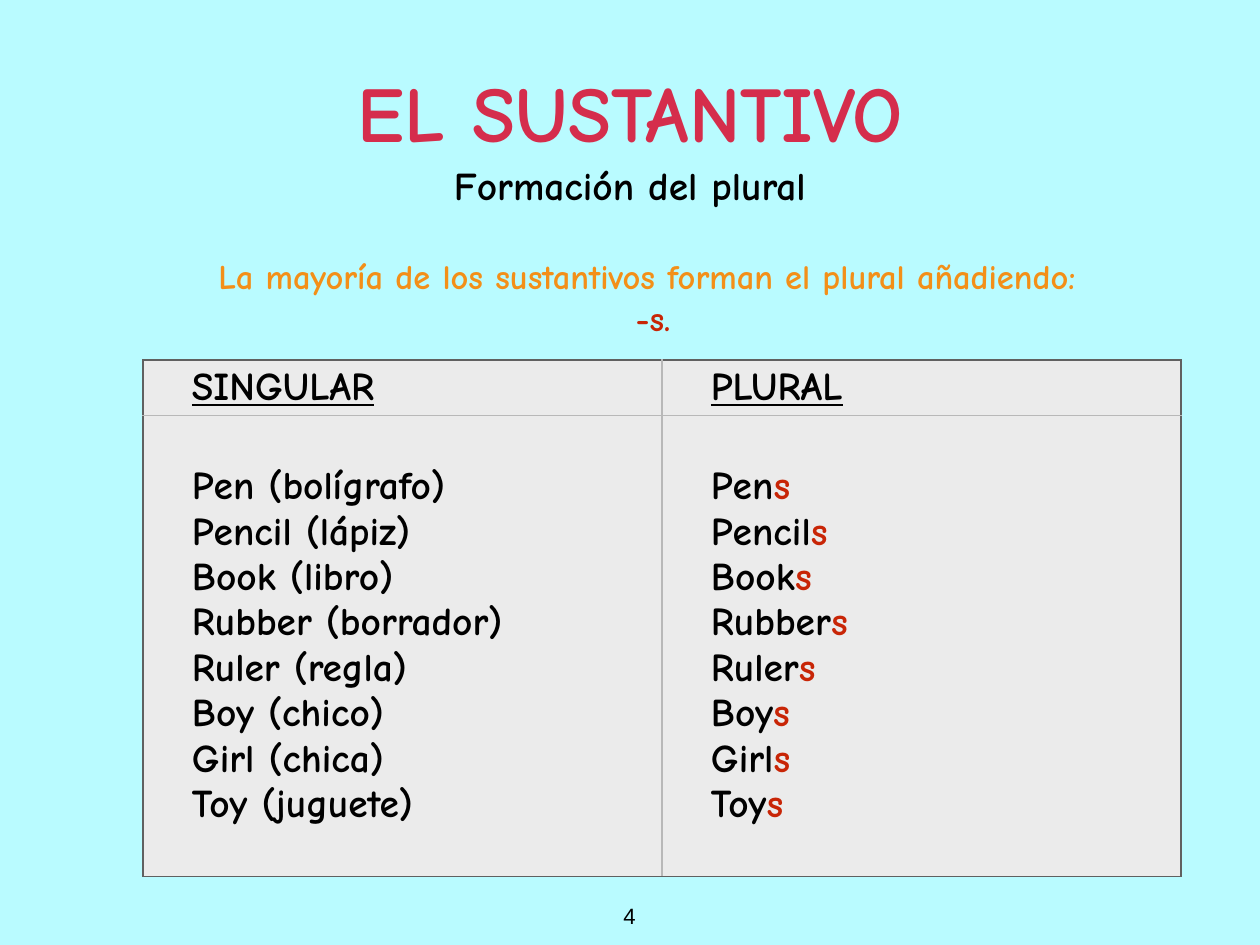
from lxml.etree import SubElement
from pptx import Presentation
from pptx.dml.color import RGBColor
from pptx.enum.text import MSO_ANCHOR, MSO_AUTO_SIZE, PP_ALIGN
from pptx.oxml.ns import qn
from pptx.util import Pt

PX = 10320
INSET = 5 * PX
INDENT = 44 * PX
BLACK, RED, ORANGE, PINK = "000000", "C82506", "F38F18", "D52D4C"
OUTER, INNER = "606060", "B8B8B8"
COMIC = {"name": "Comic Neue", "bold": True}


def paint(fill, color):
    fill.solid()
    fill.fore_color.rgb = RGBColor.from_string(color)


def write(text_frame, lines, font_format, alignment):
    """Fill a frame with lines, each a list of (text, color) runs."""
    for index, line in enumerate(lines):
        paragraph = text_frame.paragraphs[0] if index == 0 else text_frame.add_paragraph()
        paragraph.alignment = alignment
        paragraph.space_before = Pt(0)
        for text, color in line:
            run = paragraph.add_run()
            run.text = text
            for name, value in font_format.items():
                setattr(run.font, name, value)
            paint(run.font.fill, color)


presentation = Presentation()
presentation.slide_width = 1260 * PX
presentation.slide_height = 945 * PX
slide = presentation.slides.add_slide(presentation.slide_layouts[0])
paint(slide.background.fill, "B9FBFF")

# Headings and page number
rule = slide.shapes.title
subtitle = slide.placeholders[1]
heading = slide.shapes.add_textbox(0, 0, 0, 0)
page_number = slide.shapes.add_textbox(0, 0, 0, 0)
rule_lines = [
    [("La mayoría de los sustantivos forman el plural añadiendo: ", ORANGE)],
    [("-s.", RED)],
]
text_blocks = [
    (rule, (134, 222, 1038, 121), MSO_ANCHOR.BOTTOM, True,
     rule_lines, {**COMIC, "size": Pt(28)}),
    (heading, (123, 43, 1014, 120), MSO_ANCHOR.BOTTOM, True,
     [[("EL SUSTANTIVO", PINK)]], {**COMIC, "size": Pt(64)}),
    (subtitle, (123, 156, 1014, 64), MSO_ANCHOR.TOP, True,
     [[("Formación del plural", BLACK)]], {**COMIC, "size": Pt(32)}),
    (page_number, (618, 897, 23, 37), MSO_ANCHOR.TOP, False,
     [[("4", BLACK)]], {"name": "Arial", "size": Pt(18)}),
]
for shape, box, anchor, wrap, lines, font_format in text_blocks:
    shape.left, shape.top, shape.width, shape.height = [length * PX for length in box]
    frame_format = {
        "auto_size": MSO_AUTO_SIZE.NONE, "word_wrap": wrap, "vertical_anchor": anchor,
        "margin_left": INSET, "margin_right": INSET,
        "margin_top": INSET, "margin_bottom": INSET,
    }
    for name, value in frame_format.items():
        setattr(shape.text_frame, name, value)
    write(shape.text_frame, lines, font_format, PP_ALIGN.CENTER)

# Table of singular and plural nouns
nouns = [
    ("Pen", "bolígrafo"), ("Pencil", "lápiz"), ("Book", "libro"), ("Rubber", "borrador"),
    ("Ruler", "regla"), ("Boy", "chico"), ("Girl", "chica"), ("Toy", "juguete"),
]
singulars = [[(f"{noun} ({meaning})", BLACK)] for noun, meaning in nouns]
plurals = [[(noun, BLACK), ("s", RED)] for noun, meaning in nouns]
cell_lines = [
    [[[("SINGULAR", BLACK)]], [[("PLURAL", BLACK)]]],
    [singulars, plurals],
]
table = slide.shapes.add_table(2, 2, 143 * PX, 360 * PX, 1038 * PX, 516 * PX).table
table.first_row = table.horz_banding = False
for column in table.columns:
    column.width = 519 * PX
for row, height in zip(table.rows, (55, 461)):
    row.height = height * PX

for row_index, row_lines in enumerate(cell_lines):
    for column_index, lines in enumerate(row_lines):
        cell = table.cell(row_index, column_index)
        cell.vertical_anchor = MSO_ANCHOR.MIDDLE
        cell.margin_left = cell.margin_right = INSET
        cell.margin_top = cell.margin_bottom = INSET
        font_format = {**COMIC, "size": Pt(32), "underline": row_index == 0}
        write(cell.text_frame, lines, font_format, PP_ALIGN.LEFT)
        for paragraph in cell.text_frame.paragraphs:
            properties = paragraph._p.get_or_add_pPr()
            properties.set("marL", "0")
            properties.set("indent", str(INDENT))

        cell_properties = cell._tc.get_or_add_tcPr()
        outer_sides = ("lnL" if column_index == 0 else "lnR",
                       "lnT" if row_index == 0 else "lnB")
        for side in ("lnL", "lnR", "lnT", "lnB"):
            line = SubElement(cell_properties, qn(f"a:{side}"), w=str(Pt(1)))
            solid_fill = SubElement(line, qn("a:solidFill"))
            SubElement(solid_fill, qn("a:srgbClr"), val=OUTER if side in outer_sides else INNER)
        paint(cell.fill, "EBEBEB")

presentation.save("out.pptx")
